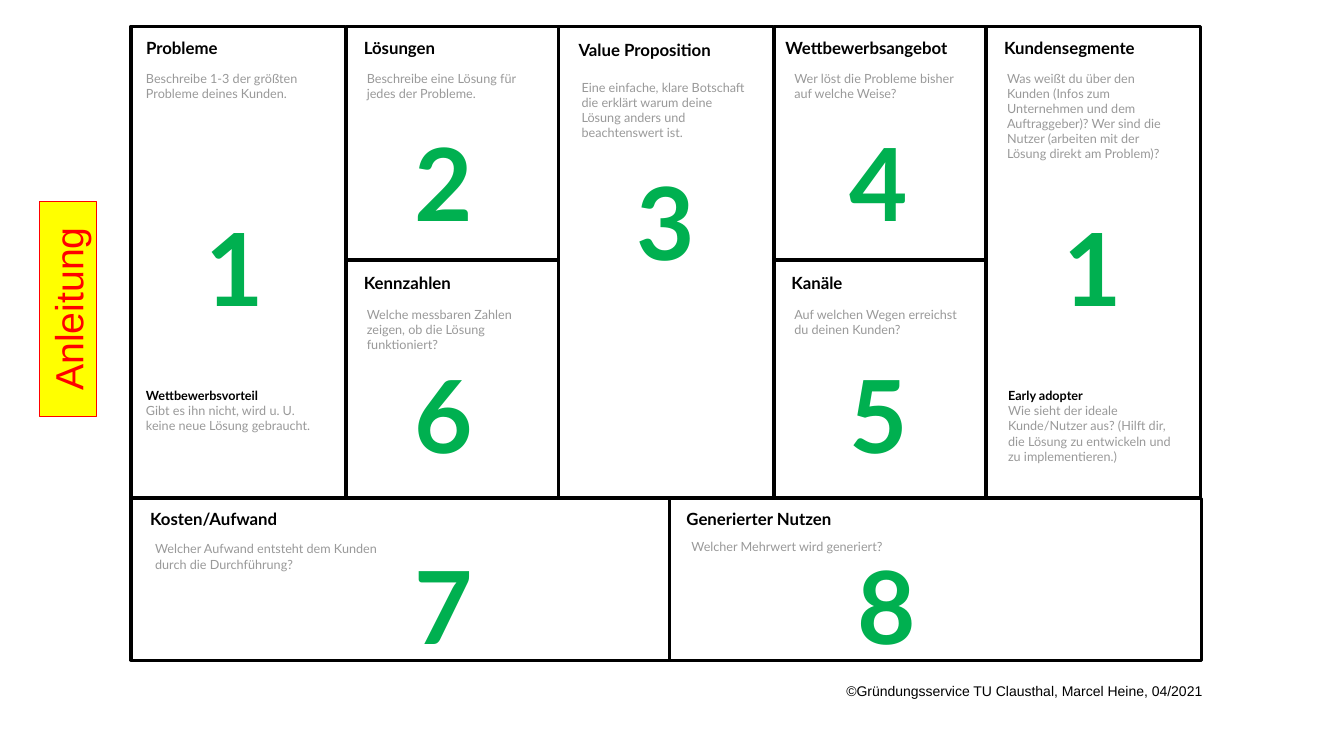
"""Builds a lean canvas guide with numbered fields and short instructions."""
from dataclasses import dataclass

from pptx import Presentation
from pptx.dml.color import RGBColor
from pptx.enum.shapes import MSO_SHAPE
from pptx.enum.text import MSO_ANCHOR, PP_ALIGN
from pptx.util import Pt

PX = 9144
RECTANGLE = MSO_SHAPE.RECTANGLE
TOP, MIDDLE = MSO_ANCHOR.TOP, MSO_ANCHOR.MIDDLE
LEFT, CENTER, RIGHT = PP_ALIGN.LEFT, PP_ALIGN.CENTER, PP_ALIGN.RIGHT


@dataclass(frozen=True)
class Style:
    font: str
    size: int
    color: str
    bold: bool = False
    align: PP_ALIGN = LEFT


@dataclass(frozen=True)
class Theme:
    paper: str = "FFFFFF"
    frame: str = "000000"
    label_fill: str = "FFFF00"
    label_line: str = "FF0000"
    heading: Style = Style("Lato", 12, "000000", True)
    hint: Style = Style("Lato", 9, "999999")
    subheading: Style = Style("Lato", 9, "000000", True)
    number: Style = Style("Lato", 72, "00B050", True, CENTER)
    label: Style = Style("Arial", 28, "FF0000", False, CENTER)
    credit: Style = Style("Arial", 10, "000000", False, RIGHT)


THEME = Theme()

deck = Presentation()
deck.slide_width, deck.slide_height = 1333 * PX, 750 * PX
slide = deck.slides.add_slide(deck.slide_layouts[6])


def add_panel(bounds, fill, line, weight):
    panel = slide.shapes.add_shape(RECTANGLE, *(PX * v for v in bounds))
    panel.shadow.inherit = False
    panel.fill.solid()
    panel.fill.fore_color.rgb = RGBColor.from_string(fill)
    panel.line.color.rgb = RGBColor.from_string(line)
    panel.line.width = Pt(weight)
    return panel


def write(bounds, lines, inset=10, anchor=TOP, holder=None):
    holder = holder or slide.shapes.add_textbox(*(PX * v for v in bounds))
    frame = holder.text_frame
    frame.word_wrap = True
    frame.vertical_anchor = anchor
    frame.margin_left = frame.margin_right = 10 * PX
    frame.margin_top = frame.margin_bottom = inset * PX
    for index, (text, style) in enumerate(lines):
        paragraph = frame.add_paragraph() if index else frame.paragraphs[0]
        paragraph.text = text
        paragraph.alignment = style.align
        paragraph.font.name = style.font
        paragraph.font.size = Pt(style.size)
        paragraph.font.bold = style.bold
        paragraph.font.color.rgb = RGBColor.from_string(style.color)


fields = [
    (130, 26, 213, 468),
    (344, 26, 211, 233),
    (554, 26, 213, 468),
    (978, 26, 213, 468),
    (344, 258, 210, 236),
    (768, 26, 210, 233),
    (768, 258, 210, 236),
    (130, 495, 534, 160),
    (664, 495, 528, 160),
]
for field in fields:
    add_panel(field, THEME.paper, THEME.frame, 2.25)

headings = [
    (135, 27, 178, "Probleme", TOP),
    (351, 27, 178, "Lösungen", TOP),
    (564, 27, 195, "Value Proposition", MIDDLE),
    (769, 27, 207, "Wettbewerbsangebot", TOP),
    (986, 27, 206, "Kundensegmente", TOP),
    (351, 261, 195, "Kennzahlen", TOP),
    (775, 261, 195, "Kanäle", TOP),
    (139, 495, 195, "Kosten/Aufwand", TOP),
    (671, 495, 279, "Generierter Nutzen", TOP),
]
for left, top, width, heading, anchor in headings:
    write((left, top, width, 45), [(heading, THEME.heading)], anchor=anchor)

hints = [
    (135, 60, 190, "Beschreibe 1-3 der größten Probleme deines Kunden."),
    (354, 60, 190, "Beschreibe eine Lösung für jedes der Probleme."),
    (567, 69, 190, "Eine einfache, klare Botschaft die erklärt warum deine "
                   "Lösung anders und beachtenswert ist."),
    (778, 60, 190, "Wer löst die Probleme bisher auf welche Weise?"),
    (989, 60, 190, "Was weißt du über den Kunden (Infos zum Unternehmen und dem "
                   "Auftraggeber)? Wer sind die Nutzer (arbeiten mit der Lösung "
                   "direkt am Problem)?"),
    (354, 294, 190, "Welche messbaren Zahlen zeigen, ob die Lösung funktioniert?"),
    (778, 294, 190, "Auf welchen Wegen erreichst du deinen Kunden?"),
    (144, 527, 241, "Welcher Aufwand entsteht dem Kunden durch die Durchführung?"),
    (676, 527, 320, "Welcher Mehrwert wird generiert?"),
]
for left, top, width, hint in hints:
    write((left, top, width, 70), [(hint, THEME.hint)])

additions = [
    (135, "Wettbewerbsvorteil",
     "Gibt es ihn nicht, wird u. U. keine neue Lösung gebraucht."),
    (990, "Early adopter",
     "Wie sieht der ideale Kunde/Nutzer aus? (Hilft dir, die Lösung zu "
     "entwickeln und zu implementieren.)"),
]
for left, subheading, hint in additions:
    write((left, 375, 190, 70),
          [(subheading, THEME.subheading), (hint, THEME.hint)])

steps = [
    (154, 199, "1"),
    (1005, 199, "1"),
    (362, 115, "2"),
    (582, 154, "3"),
    (793, 115, "4"),
    (793, 345, "5"),
    (362, 345, "6"),
    (362, 534, "7"),
    (801, 534, "8"),
]
for left, top, number in steps:
    write((left, top, 157, 130), [(number, THEME.number)], inset=5)

guide_bounds = (-39, 278, 213, 57)
guide = add_panel(guide_bounds, THEME.label_fill, THEME.label_line, 0.75)
guide.rotation = 270
write(guide_bounds, [("Anleitung", THEME.label)], inset=5, holder=guide)

write((707, 672, 495, 27),
      [("©Gründungsservice TU Clausthal, Marcel Heine, 04/2021", THEME.credit)],
      inset=5)

deck.save("out.pptx")
